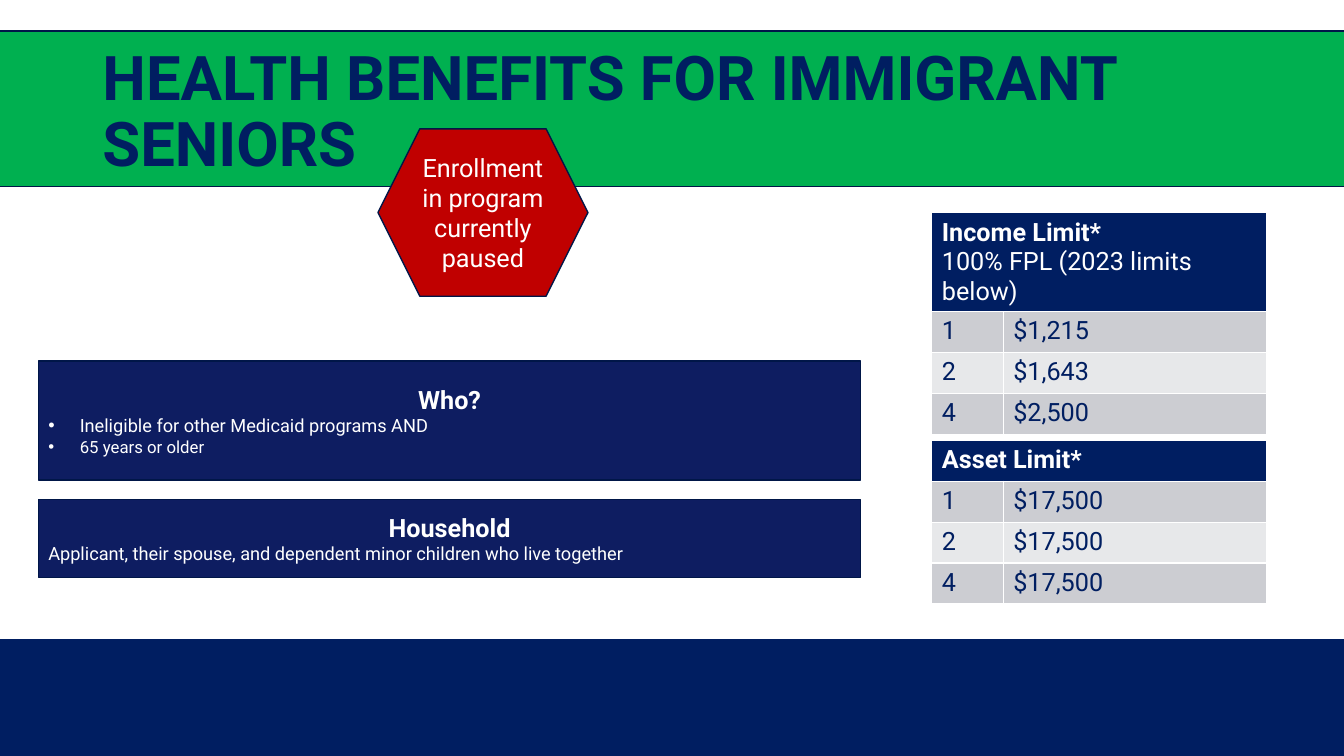
from lxml.etree import SubElement
from pptx import Presentation
from pptx.dml.color import RGBColor
from pptx.enum.shapes import MSO_SHAPE
from pptx.enum.text import MSO_ANCHOR, PP_ALIGN
from pptx.oxml.ns import qn
from pptx.util import Pt

COLORS = {
    "navy": "001E61", "panel": "0E1D61", "outline": "001648", "green": "00B050",
    "red": "C00000", "white": "FFFFFF", "odd": "CCCDD2", "even": "E7E8EA",
}
FONT = "Roboto"
ROW_HEIGHT = 29.2


def color(name):
    """Return the named colour."""
    return RGBColor.from_string(COLORS[name])


def style(para, size, name="white", bold=False):
    """Set the font of a paragraph."""
    font = para.font
    font.name, font.size, font.bold = FONT, Pt(size), bold
    font.color.rgb = color(name)


def add_bullet(para):
    """Give a paragraph a hanging bullet."""
    properties = para._p.get_or_add_pPr()
    properties.set("marL", str(Pt(22.5)))
    properties.set("indent", str(Pt(-22.5)))
    SubElement(properties, qn("a:buFont")).set("typeface", "Arial")
    SubElement(properties, qn("a:buChar")).set("char", "•")


def add_block(page, kind, left, top, width, height, fill, outlined=True):
    """Add a filled shape and return it."""
    block = page.shapes.add_shape(kind, Pt(left), Pt(top), Pt(width), Pt(height))
    block.shadow.inherit = False
    block.fill.solid()
    block.fill.fore_color.rgb = color(fill)
    if outlined:
        block.line.color.rgb = color("outline")
        block.line.width = Pt(1)
    else:
        block.line.fill.background()
    return block


def add_title(page, text):
    """Place the title in front of the band."""
    title = page.shapes.title
    page.shapes.element.append(title.element)
    title.left, title.top, title.width, title.height = Pt(66), Pt(29), Pt(828), Pt(104.4)
    title.text_frame.text = text
    title.text_frame.word_wrap = True
    title.text_frame.vertical_anchor = MSO_ANCHOR.MIDDLE
    para = title.text_frame.paragraphs[0]
    para.alignment = PP_ALIGN.LEFT
    para.line_spacing = 0.9
    style(para, 44, "navy", bold=True)


def add_panel(page, top, height, heading, lines, bulleted=False):
    """Add a panel with a centred heading over lines of (text, size)."""
    panel = add_block(page, MSO_SHAPE.RECTANGLE, 27.4, top, 587.5, height, "panel")
    frame = panel.text_frame
    frame.word_wrap = True
    frame.vertical_anchor = MSO_ANCHOR.MIDDLE
    frame.text = heading
    frame.paragraphs[0].alignment = PP_ALIGN.CENTER
    style(frame.paragraphs[0], 18, bold=True)
    for text, size in lines:
        para = frame.add_paragraph()
        para.text = text
        para.alignment = PP_ALIGN.LEFT
        if bulleted:
            add_bullet(para)
        style(para, size)


def add_badge(page, text):
    """Add the red status hexagon."""
    badge = add_block(page, MSO_SHAPE.HEXAGON, 270, 92, 150, 119.6, "red")
    frame = badge.text_frame
    frame.word_wrap = True
    frame.vertical_anchor = MSO_ANCHOR.MIDDLE
    frame.text = text
    frame.paragraphs[0].alignment = PP_ALIGN.CENTER
    style(frame.paragraphs[0], 18)


def fill_cell(cell, text, fill, font_color):
    """Write text into a filled cell."""
    cell.fill.solid()
    cell.fill.fore_color.rgb = color(fill)
    cell.text = text
    for para in cell.text_frame.paragraphs:
        style(para, 18, font_color)


def add_limits(page, top, header_height, heading, limits):
    """Add a table of limits by household size under a merged heading."""
    height = header_height + ROW_HEIGHT * len(limits)
    table = page.shapes.add_table(
        len(limits) + 1, 2, Pt(665.6), Pt(top), Pt(238.8), Pt(height)).table
    table.columns[0].width, table.columns[1].width = Pt(51), Pt(187.8)
    table.rows[0].height = Pt(header_height)
    header = table.cell(0, 0)
    header.merge(table.cell(0, 1))
    fill_cell(header, heading, "navy", "white")
    header.text_frame.paragraphs[0].font.bold = True
    for row, values in enumerate(limits, start=1):
        table.rows[row].height = Pt(ROW_HEIGHT)
        for column, text in enumerate(values):
            fill_cell(table.cell(row, column), text, "odd" if row % 2 else "even", "navy")


def main():
    """Build the slide and save it."""
    deck = Presentation()
    deck.slide_width, deck.slide_height = Pt(960), Pt(540)
    page = deck.slides.add_slide(deck.slide_layouts[5])
    add_block(page, MSO_SHAPE.RECTANGLE, 0, 456.5, 960, 83.5, "navy", outlined=False)
    add_block(page, MSO_SHAPE.RECTANGLE, -27, 22.3, 996, 110.9, "green")
    add_title(page, "HEALTH BENEFITS FOR IMMIGRANT SENIORS")
    add_limits(page, 152, 70, "Income Limit*\n100% FPL (2023 limits below)",
               [("1", "$1,215"), ("2", "$1,643"), ("4", "$2,500")])
    add_limits(page, 314.6, ROW_HEIGHT, "Asset Limit*",
               [(size, "$17,500") for size in ("1", "2", "4")])
    add_panel(page, 257.8, 85, "Who?",
              [("Ineligible for other Medicaid programs AND", 13),
               ("65 years or older", 12)], bulleted=True)
    add_panel(page, 357, 55.4, "Household",
              [("Applicant, their spouse, and dependent minor children who live together", 13)])
    add_badge(page, "Enrollment in program currently paused")
    deck.save("out.pptx")


if __name__ == "__main__":
    main()
